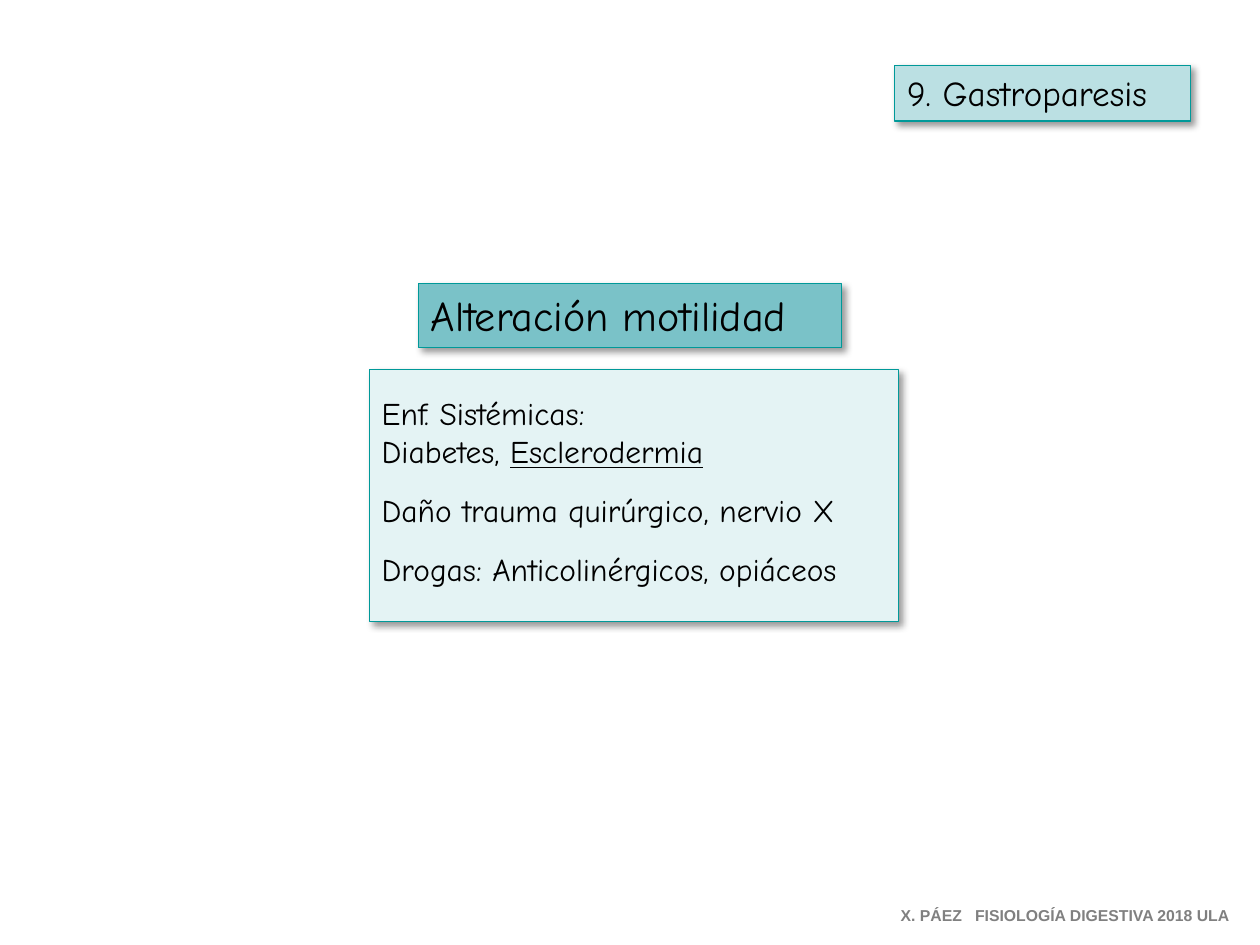
from lxml import etree
from pptx import Presentation
from pptx.dml.color import RGBColor
from pptx.enum import shapes, text
from pptx.oxml import ns
from pptx.util import Pt

BLACK = RGBColor(0x00, 0x00, 0x00)
GRAY = RGBColor(0x80, 0x80, 0x80)
TEAL = RGBColor(0x00, 0x99, 0x99)
TOPIC_FILL = RGBColor(0xBB, 0xE0, 0xE3)
CAUSES_FILL = RGBColor(0xE4, 0xF3, 0xF4)
HEADING_FILL = RGBColor(0x7A, 0xC2, 0xC8)


def add_panel(left, top, width, height, fill, lines, size, margin_top=3.6):
    """Add a teal-edged box with a soft shadow and left-aligned lines."""
    panel = slide.shapes.add_shape(
        shapes.MSO_SHAPE.RECTANGLE, Pt(left), Pt(top), Pt(width), Pt(height))
    panel.fill.solid()
    panel.fill.fore_color.rgb = fill
    panel.line.color.rgb = TEAL
    panel.line.width = Pt(0.75)

    # Soft shadow: 4 pt blur, 3 pt away at 45 degrees, 40 % black
    panel.shadow.inherit = False
    effects = panel._element.spPr.find(ns.qn("a:effectLst"))
    shadow = etree.SubElement(
        effects, ns.qn("a:outerShdw"), blurRad=str(Pt(4)), dist=str(Pt(3)),
        dir=str(45 * 60000), algn="ctr", rotWithShape="0")
    color = etree.SubElement(shadow, ns.qn("a:srgbClr"), val="000000")
    etree.SubElement(color, ns.qn("a:alpha"), val="40000")

    frame = panel.text_frame
    frame.word_wrap = True
    frame.vertical_anchor = text.MSO_ANCHOR.TOP
    frame.margin_top = Pt(margin_top)
    frame.text = "\n".join(lines)
    for paragraph in frame.paragraphs:
        paragraph.alignment = text.PP_ALIGN.LEFT
        paragraph.font.name = "Comic Neue"
        paragraph.font.size = Pt(size)
        paragraph.font.color.rgb = BLACK
    return frame.paragraphs


prs = Presentation()
prs.slide_width, prs.slide_height = Pt(720), Pt(540)
slide = prs.slides.add_slide(prs.slide_layouts[6])

# Topic label
add_panel(511.2, 37.5, 169.2, 31.7, TOPIC_FILL, ["9. Gastroparesis"], 20)

# Causes
systemic, diseases, trauma, drugs = add_panel(
    211, 211, 302.4, 144, CAUSES_FILL,
    ["Enf. Sistémicas:", "Diabetes, ", "Daño trauma quirúrgico, nervio X",
     "Drogas: Anticolinérgicos, opiáceos"], 18, margin_top=14.4)
scleroderma = diseases.add_run()
scleroderma.text = "Esclerodermia"
scleroderma.font.underline = True
for cause in (trauma, drugs):
    cause.space_before = Pt(12)

# Heading above the causes
add_panel(239, 162, 242, 36.7, HEADING_FILL, ["Alteración motilidad"], 24)

# Course credit, the title set off by a tab stop
credit = slide.shapes.add_textbox(Pt(507.6), Pt(514), Pt(206), Pt(18))
credit.text_frame.word_wrap = True
credit.text_frame.text = "X. PÁEZ\tFISIOLOGÍA DIGESTIVA 2018 ULA"
credit_line = credit.text_frame.paragraphs[0]
tabs = etree.SubElement(credit_line._p.get_or_add_pPr(), ns.qn("a:tabLst"))
etree.SubElement(tabs, ns.qn("a:tab"), pos=str(Pt(42.5)), algn="l")
credit_line.font.name = "Arial"
credit_line.font.size = Pt(9)
credit_line.font.bold = True
credit_line.font.color.rgb = GRAY

prs.save("out.pptx")
